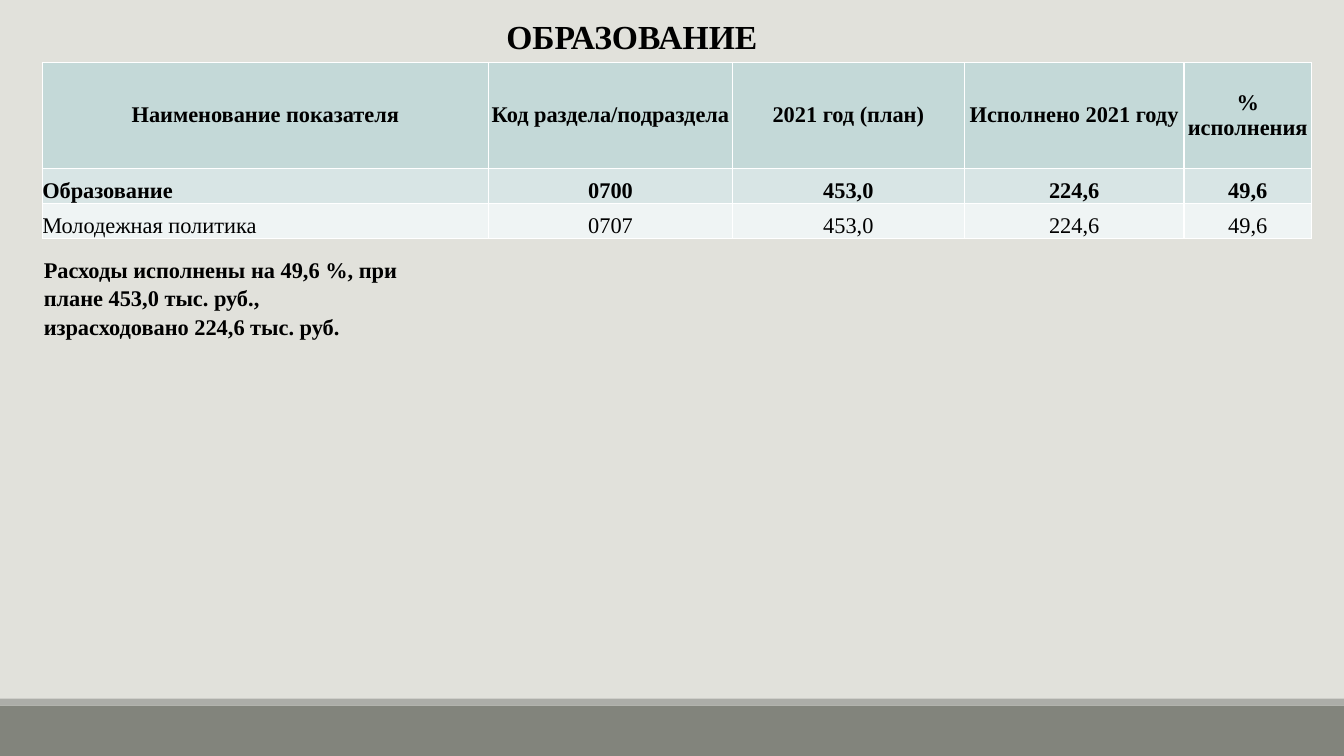
import pptx
import pptx.util
import pptx.dml.color
import pptx.enum.shapes
import pptx.enum.text
import pptx.oxml
import pptx.oxml.ns
from dataclasses import dataclass

Pt = pptx.util.Pt
Align = pptx.enum.text.PP_ALIGN
Anchor = pptx.enum.text.MSO_ANCHOR


@dataclass(frozen=True)
class Theme:
    font: str = "Times New Roman"
    big: int = 24
    size: int = 16
    ink: str = "000000"
    back: str = "E1E1DB"
    foot: str = "82847C"
    strip: str = "ACADA8"
    rule: str = "FFFFFF"
    head: str = "C4D9D8"
    total: str = "D8E5E5"
    item: str = "EFF4F4"


def paint(fill, color):
    fill.solid()
    fill.fore_color.rgb = pptx.dml.color.RGBColor.from_string(color)


class Page:
    def __init__(self, slide, theme):
        self.slide, self.theme = slide, theme
        paint(slide.background.fill, theme.back)

    def label(self, frame, text, size, bold=True, align=Align.LEFT, space=1.0):
        frame.text = text
        frame.word_wrap = True
        para = frame.paragraphs[0]
        para.alignment = align
        para.line_spacing = space
        font = para.runs[0].font
        font.name, font.size, font.bold = self.theme.font, Pt(size), bold
        font.color.rgb = pptx.dml.color.RGBColor.from_string(self.theme.ink)

    def band(self, top, high, color):
        kind = pptx.enum.shapes.MSO_SHAPE.RECTANGLE
        shape = self.slide.shapes.add_shape(kind, 0, Pt(top), Pt(960), Pt(high))
        shape.shadow.inherit = False
        paint(shape.fill, color)
        shape.line.fill.background()

    def title(self, text, left, top, wide, high):
        shape = self.slide.shapes.title
        shape.left, shape.top = Pt(left), Pt(top)
        shape.width, shape.height = Pt(wide), Pt(high)
        frame = shape.text_frame
        self.label(frame, text, self.theme.big, align=Align.CENTER)
        frame.auto_size = pptx.enum.text.MSO_AUTO_SIZE.NONE
        frame.vertical_anchor = Anchor.TOP

    def note(self, text, left, top, wide, high):
        box = self.slide.shapes.add_textbox(Pt(left), Pt(top), Pt(wide), Pt(high))
        self.label(box.text_frame, text, self.theme.size, space=1.05)

    def edge(self, cell):
        props = cell._tc.get_or_add_tcPr()
        for spot, side in enumerate("LRTB"):
            line = pptx.oxml.parse_xml(
                f'<a:ln{side} {pptx.oxml.ns.nsdecls("a")} w="{Pt(1)}"><a:solidFill>'
                f'<a:srgbClr val="{self.theme.rule}"/></a:solidFill></a:ln{side}>')
            props.insert(spot, line)

    def table(self, rows, left, top, widths, heights, fills):
        table = self.slide.shapes.add_table(
            len(rows), len(widths), Pt(left), Pt(top),
            Pt(sum(widths)), Pt(sum(heights))).table
        for col, wide in zip(table.columns, widths):
            col.width = Pt(wide)
        for i, (row, high, color) in enumerate(zip(rows, heights, fills)):
            table.rows[i].height = Pt(high)
            for j, text in enumerate(row):
                cell = table.cell(i, j)
                cell.margin_left = cell.margin_right = 0
                cell.margin_top = cell.margin_bottom = 0
                cell.vertical_anchor = Anchor.BOTTOM if i else Anchor.MIDDLE
                align = Align.LEFT if i and not j else Align.CENTER
                self.label(cell.text_frame, text, self.theme.size, i < 2, align)
                paint(cell.fill, color)
                self.edge(cell)


def main():
    deck = pptx.Presentation()
    deck.slide_width, deck.slide_height = Pt(960), Pt(540)
    theme = Theme()
    page = Page(deck.slides.add_slide(deck.slide_layouts[5]), theme)

    # Footer bands
    page.band(504, 36, theme.foot)
    page.band(499, 5, theme.strip)

    # Title
    page.title("ОБРАЗОВАНИЕ", 150, 8, 602.6, 36)

    # Budget table
    rows = [
        ("Наименование показателя", "Код раздела/подраздела", "2021 год (план)",
         "Исполнено 2021 году", "% исполнения"),
        ("Образование", "0700", "453,0", "224,6", "49,6"),
        ("Молодежная политика", "0707", "453,0", "224,6", "49,6"),
    ]
    page.table(rows, 30.2, 44.6, (318.8, 174.2, 165.6, 157, 91),
               (75.6, 25.2, 25.2), (theme.head, theme.total, theme.item))

    # Summary
    page.note("Расходы исполнены на 49,6 %, при плане 453,0 тыс. руб., "
              "израсходовано 224,6 тыс. руб.", 24.2, 178.6, 268, 65.5)

    deck.save("out.pptx")


if __name__ == "__main__":
    main()
